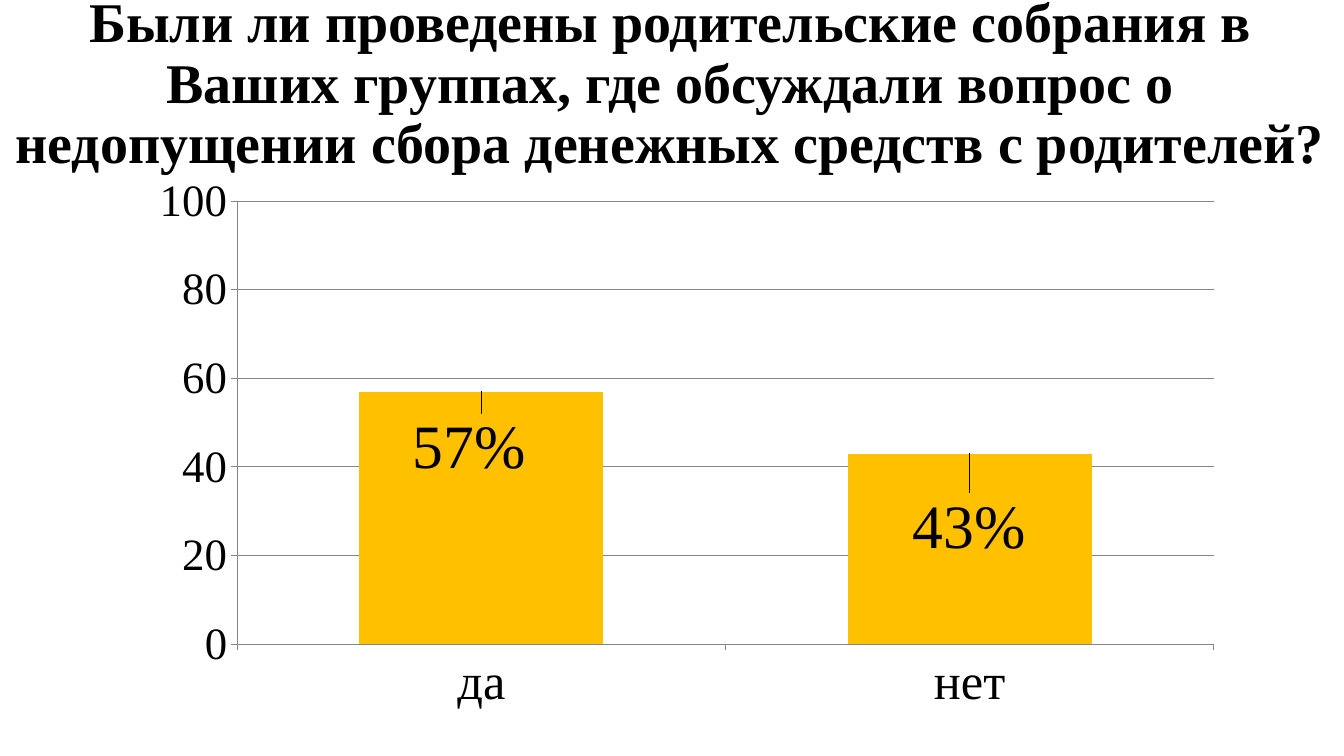
from lxml.etree import SubElement
from pptx import Presentation
from pptx.chart.data import CategoryChartData
from pptx.dml.color import RGBColor
from pptx.enum.chart import XL_CHART_TYPE, XL_LABEL_POSITION, XL_TICK_MARK
from pptx.enum.text import MSO_ANCHOR, MSO_AUTO_SIZE, PP_ALIGN
from pptx.oxml.ns import qn
from pptx.util import Inches, Pt

FONT = "Times New Roman"
BLACK = "000000"
GREY = "868686"
GOLD = "FFC000"
TITLE = ("Были ли проведены родительские собрания в Ваших группах, "
         "где обсуждали вопрос о недопущении сбора денежных средств с родителей?")
ANSWERS = {"да": 57, "нет": 43}
SHIFTS = [(-0.01, 0.03), (0, 0.06)]


def paint(color, value):
    color.rgb = RGBColor.from_string(value)


def style(font, size, color=BLACK, bold=False):
    font.name = FONT
    font.size = Pt(size)
    font.bold = bold
    paint(font.color, color)


def write(frame, text, size, align=PP_ALIGN.CENTER, spacing=None, **look):
    para = frame.paragraphs[0]
    para.alignment = align
    para.line_spacing = spacing
    run = para.add_run()
    run.text = text
    style(run.font, size, **look)


def add_title(slide):
    title = slide.shapes.title
    title.left, title.top = Inches(-0.08), Inches(0.12)
    title.width, title.height = Inches(13.45), Inches(1.45)
    frame = title.text_frame
    frame.word_wrap = True
    frame.auto_size = MSO_AUTO_SIZE.NONE
    frame.vertical_anchor = MSO_ANCHOR.MIDDLE
    write(frame, TITLE, 40, spacing=0.9, bold=True)


def set_layout(parent, index, **values):
    layout = SubElement(parent, qn("c:layout"))
    parent.insert(index, layout)
    manual = SubElement(layout, qn("c:manualLayout"))
    for name, value in values.items():
        SubElement(manual, qn(f"c:{name}")).set("val", str(value))


def format_axis(axis, size):
    style(axis.tick_labels.font, size)
    axis.major_tick_mark = XL_TICK_MARK.OUTSIDE
    axis.minor_tick_mark = XL_TICK_MARK.NONE
    draw_line(axis.format.line)


def draw_line(line):
    line.width = Pt(0.75)
    paint(line.color, GREY)


def add_label(point, value, shift):
    label = point.data_label
    write(label.text_frame, f"{value}%", 44)
    label.position = XL_LABEL_POSITION.INSIDE_END
    left, top = shift
    set_layout(label.text_frame._txBody.getparent().getparent(), 1, x=left, y=top)


def add_bars(slide):
    data = CategoryChartData()
    data.categories = list(ANSWERS)
    data.add_series("Series 1", list(ANSWERS.values()))
    chart = slide.shapes.add_chart(
        XL_CHART_TYPE.COLUMN_CLUSTERED, Inches(0.76), Inches(1.41),
        Inches(12.26), Inches(5.86), data).chart
    chart.has_legend = False
    chart.has_title = False
    style(chart.font, 32)
    format_axis(chart.category_axis, 36)
    axis = chart.value_axis
    format_axis(axis, 32)
    axis.minimum_scale, axis.maximum_scale, axis.major_unit = 0, 100, 20
    axis.has_major_gridlines = True
    draw_line(axis.major_gridlines.format.line)

    plot = chart.plots[0]
    plot.gap_width = 100
    plot.vary_by_categories = False
    bars = plot.series[0]
    bars.format.fill.solid()
    paint(bars.format.fill.fore_color, GOLD)
    for index, value in enumerate(ANSWERS.values()):
        add_label(bars.points[index], value, SHIFTS[index])

    area = chart._chartSpace.chart.plotArea
    for old in area.findall(qn("c:layout")):
        area.remove(old)
    set_layout(area, 0, layoutTarget="inner", xMode="edge", yMode="edge",
               x=0.13, y=0.1, w=0.79, h=0.75)


def main():
    deck = Presentation()
    deck.slide_width, deck.slide_height = Inches(13.33), Inches(7.5)
    slide = deck.slides.add_slide(deck.slide_layouts[5])
    add_title(slide)
    add_bars(slide)
    deck.save("out.pptx")


if __name__ == "__main__":
    main()
